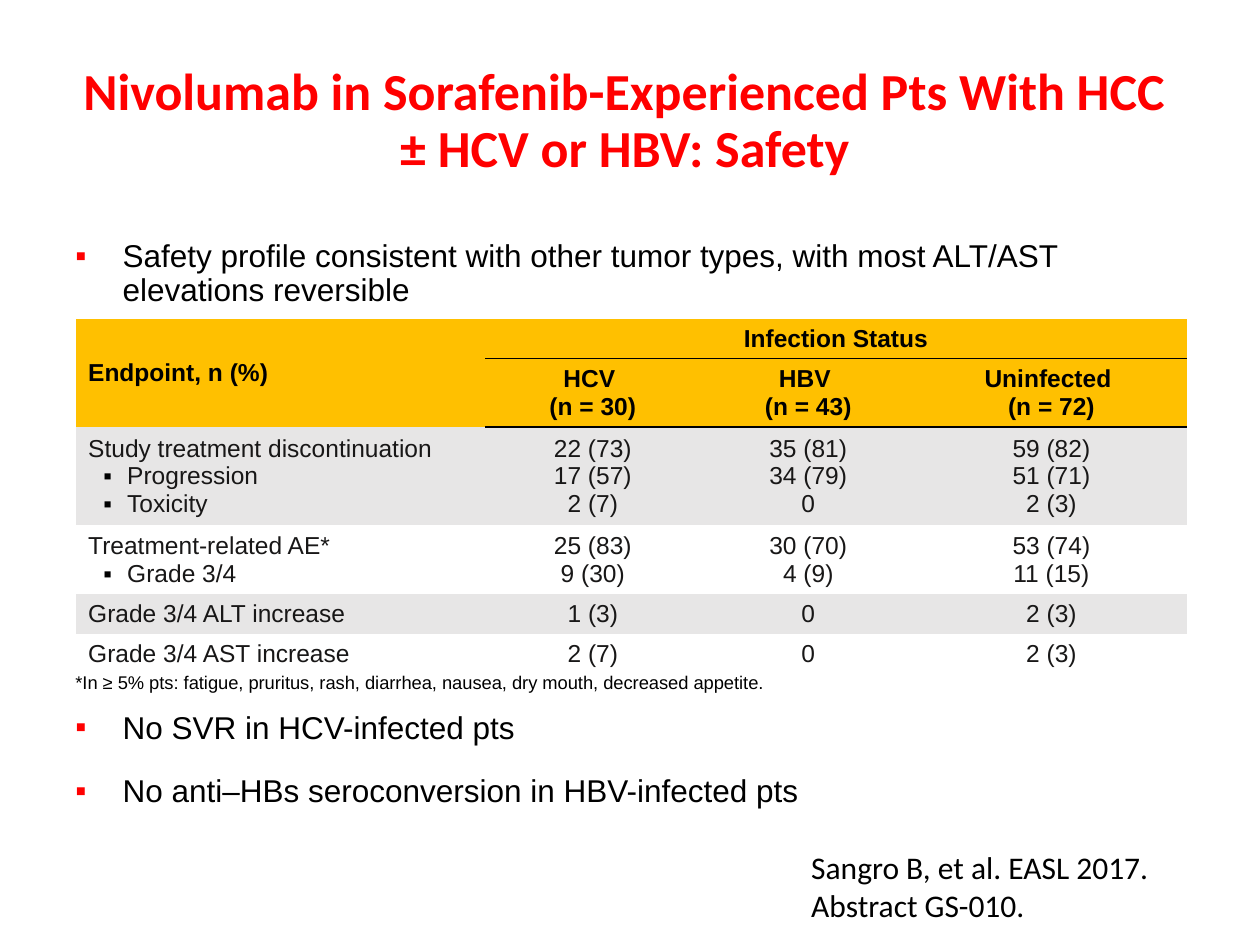
from dataclasses import dataclass
from typing import Optional

from lxml.etree import SubElement
from pptx import Presentation
from pptx.dml.color import RGBColor
from pptx.enum.text import MSO_ANCHOR as Anchor, PP_ALIGN as Align
from pptx.oxml import parse_xml
from pptx.oxml.ns import nsdecls, qn
from pptx.util import Emu, Inches, Pt

RED, BLACK, INK = "FF0000", "000000", "181717"
GOLD, GREY, WHITE = "FFC000", "E7E6E6", "FFFFFF"
NO_STYLE = "{2D5ABB26-0587-4C30-8999-92F81FD0307C}"
BULLET = "▪"

SLIDE_WIDTH, SLIDE_HEIGHT = Inches(10), Inches(7.5)


@dataclass(frozen=True)
class Area:
    """A place on the slide, in percent of its width and height."""
    left: float
    top: float
    width: float
    height: float

    def lengths(self) -> tuple:
        return (across(self.left), down(self.top),
                across(self.width), down(self.height))


@dataclass(frozen=True)
class Style:
    size: float
    color: str = BLACK
    font: str = "Arial"
    bold: bool = False
    align: Align = Align.LEFT
    line_spacing: Optional[float] = None
    before: float = 0
    after: float = 0
    bullet_color: Optional[str] = None
    indent: float = 0  # percent of the slide's width
    hanging: float = 0


@dataclass(frozen=True)
class TextBlock:
    area: Area
    lines: tuple
    style: Style
    anchor: Anchor = Anchor.TOP


TITLE = Style(29.7, RED, "Calibri", True, Align.CENTER, 0.9)
POINT = Style(18, line_spacing=0.9, before=10, after=7,
              bullet_color=RED, indent=3.75, hanging=3.75)
NOTE = Style(10.5)
CITATION = Style(18, font="Calibri")
HEAD_LEFT = Style(14, bold=True)
HEAD = Style(14, bold=True, align=Align.CENTER)
ENDPOINT = Style(14, INK)
DETAIL = Style(14, INK, bullet_color=BLACK, indent=3.1, hanging=1.9)
VALUE = Style(14, INK, align=Align.CENTER)

BLOCKS = (
    TextBlock(Area(5, 6.93, 89.2, 12),
              ("Nivolumab in Sorafenib-Experienced Pts With HCC ± HCV or HBV: Safety",),
              TITLE, Anchor.MIDDLE),
    TextBlock(Area(5, 24.8, 90.9, 5.6),
              ("Safety profile consistent with other tumor types, "
               "with most ALT/AST elevations reversible",), POINT),
    TextBlock(Area(63.4, 88.93, 36.6, 9.47),
              ("Sangro B, et al. EASL 2017. Abstract GS-010.",),
              CITATION, Anchor.BOTTOM),
    TextBlock(Area(5, 70.4, 60.5, 3.73),
              ("*In ≥ 5% pts: fatigue, pruritus, rash, diarrhea, nausea, "
               "dry mouth, decreased appetite.",), NOTE),
    TextBlock(Area(5, 74.67, 90.9, 12.13),
              ("No SVR in HCV-infected pts",
               "No anti–HBs seroconversion in HBV-infected pts"), POINT),
)

# Table content: each body row holds the endpoint lines, then one column per group
TABLE_AREA = Area(6, 33.73, 88.2, 37.2)
COLUMN_SHARES = (32.5, 17.1, 17.1, 21.5)
ROW_SHARES = (4.1, 7.2, 10.4, 7.2, 4.1, 4.1)
GROUPS = ("HCV \v(n = 30)", "HBV \v(n = 43)", "Uninfected \v(n = 72)")
BODY = (
    (("Study treatment discontinuation", "Progression", "Toxicity"),
     ("22 (73)", "17 (57)", "2 (7)"),
     ("35 (81)", "34 (79)", "0"),
     ("59 (82)", "51 (71)", "2 (3)")),
    (("Treatment-related AE*", "Grade 3/4"),
     ("25 (83)", "9 (30)"), ("30 (70)", "4 (9)"), ("53 (74)", "11 (15)")),
    (("Grade 3/4 ALT increase",), ("1 (3)",), ("0",), ("2 (3)",)),
    (("Grade 3/4 AST increase",), ("2 (7)",), ("0",), ("2 (3)",)),
)


def across(percent: float) -> Emu:
    return Emu(round(SLIDE_WIDTH * percent / 100))


def down(percent: float) -> Emu:
    return Emu(round(SLIDE_HEIGHT * percent / 100))


def rgb(color: str) -> RGBColor:
    return RGBColor.from_string(color)


def add_bullet(paragraph, style: Style) -> None:
    properties = paragraph._p.get_or_add_pPr()
    properties.set("marL", str(across(style.indent)))
    properties.set("indent", str(-across(style.hanging)))
    color = SubElement(properties, qn("a:buClr"))
    SubElement(color, qn("a:srgbClr"), val=style.bullet_color)
    SubElement(properties, qn("a:buFont"), typeface="Arial")
    SubElement(properties, qn("a:buChar"), char=BULLET)


def write(frame, lines: tuple, styles: tuple) -> None:
    """Write one paragraph per line; the last style serves all further lines."""
    for index, line in enumerate(lines):
        style = styles[min(index, len(styles) - 1)]
        paragraph = frame.add_paragraph() if index else frame.paragraphs[0]
        paragraph.text = line
        paragraph.alignment = style.align
        if style.line_spacing:
            paragraph.line_spacing = style.line_spacing
        paragraph.space_before = Pt(style.before if index else 0)
        paragraph.space_after = Pt(style.after)
        if style.bullet_color:
            add_bullet(paragraph, style)
        font = paragraph.font
        font.name, font.size, font.bold = style.font, Pt(style.size), style.bold
        font.color.rgb = rgb(style.color)


def add_text(slide, block: TextBlock) -> None:
    frame = slide.shapes.add_textbox(*block.area.lengths()).text_frame
    frame.word_wrap = True
    frame.vertical_anchor = block.anchor
    write(frame, block.lines, (block.style,))


def fill_cell(cell, lines: tuple, styles: tuple, color: str) -> None:
    cell.fill.solid()
    cell.fill.fore_color.rgb = rgb(color)
    cell.vertical_anchor = Anchor.MIDDLE
    cell.margin_left = cell.margin_right = Inches(0.1)
    cell.margin_top = cell.margin_bottom = Inches(0.04)
    write(cell.text_frame, lines, styles)


def add_border(cell, side: str) -> None:
    border = parse_xml(
        f'<a:{side} {nsdecls("a")} w="{Pt(1)}"><a:solidFill>'
        f'<a:srgbClr val="{BLACK}"/></a:solidFill></a:{side}>')
    cell._tc.get_or_add_tcPr().insert(0, border)


def add_safety_table(slide) -> None:
    frame = slide.shapes.add_table(
        len(ROW_SHARES), len(COLUMN_SHARES), *TABLE_AREA.lengths())
    table = frame.table
    table._tbl.tblPr.find(qn("a:tableStyleId")).text = NO_STYLE
    for column, share in zip(table.columns, COLUMN_SHARES):
        column.width = across(share)
    for row, share in zip(table.rows, ROW_SHARES):
        row.height = down(share)

    # Two-level heading with a rule between the levels
    table.cell(0, 0).merge(table.cell(1, 0))
    table.cell(0, 1).merge(table.cell(0, len(GROUPS)))
    fill_cell(table.cell(0, 0), ("Endpoint, n (%)",), (HEAD_LEFT,), GOLD)
    fill_cell(table.cell(0, 1), ("Infection Status",), (HEAD,), GOLD)
    for column, group in enumerate(GROUPS, start=1):
        fill_cell(table.cell(1, column), (group,), (HEAD,), GOLD)
        add_border(table.cell(0, column), "lnB")
        add_border(table.cell(1, column), "lnT")

    # Banded body rows
    for index, entries in enumerate(BODY):
        color = WHITE if index % 2 else GREY
        for column, lines in enumerate(entries):
            styles = (VALUE,) if column else (ENDPOINT, DETAIL)
            fill_cell(table.cell(index + 2, column), lines, styles, color)


def main() -> None:
    presentation = Presentation()
    presentation.slide_width = SLIDE_WIDTH
    presentation.slide_height = SLIDE_HEIGHT
    slide = presentation.slides.add_slide(presentation.slide_layouts[6])
    for block in BLOCKS[:3]:
        add_text(slide, block)
    add_safety_table(slide)
    for block in BLOCKS[3:]:
        add_text(slide, block)
    presentation.save("out.pptx")


if __name__ == "__main__":
    main()
